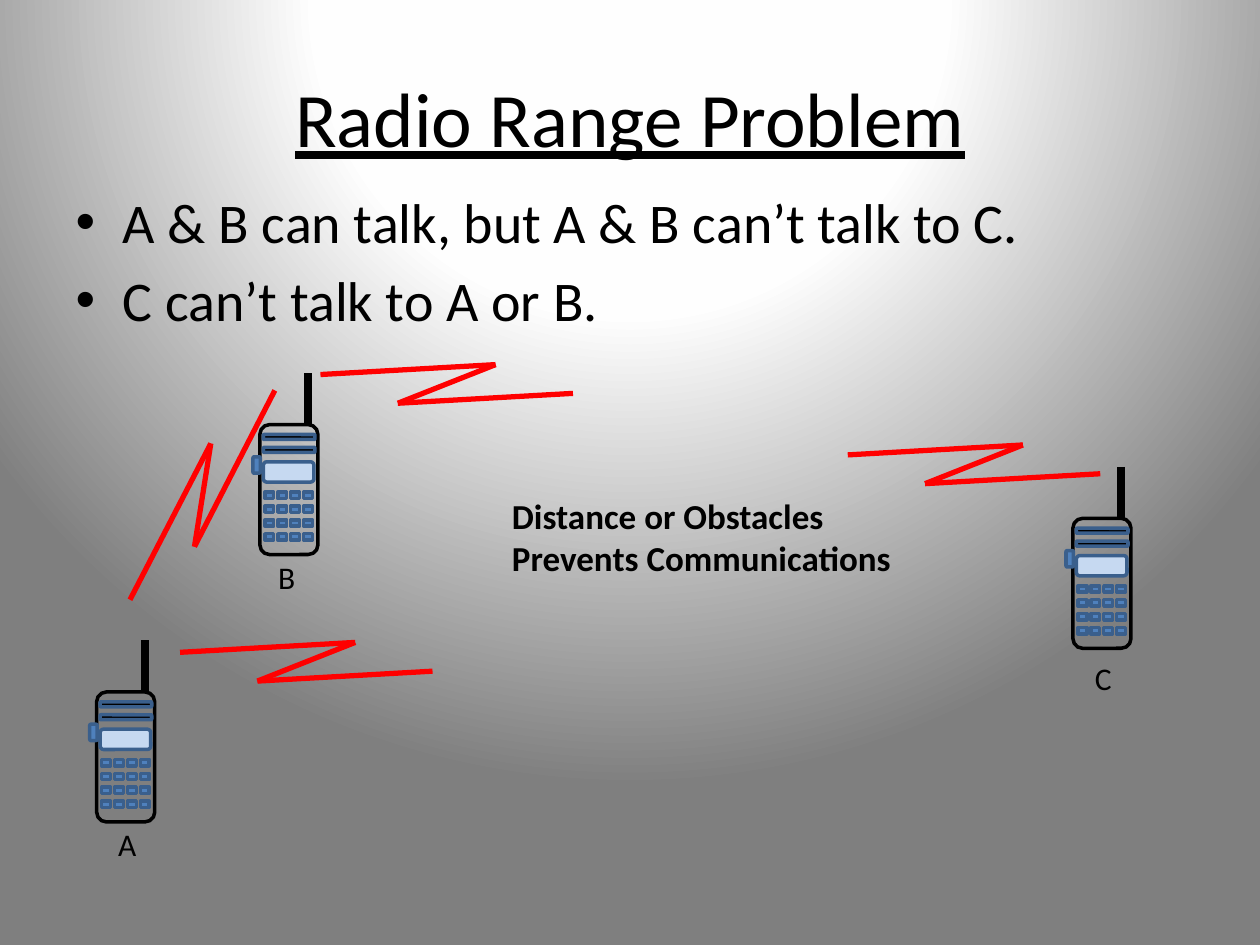
from dataclasses import dataclass

from lxml import etree
from pptx import Presentation
from pptx import util as u
from pptx.dml.color import RGBColor
from pptx.enum import shapes as sh, text as tx
from pptx.oxml import parse_xml
from pptx.oxml.ns import qn

FONT = "Calibri"
EDGE, KEY, BLACK, RED = "3A5F8C", "4F81BD", "000000", "FF0000"
ROUND, RECT = sh.MSO_SHAPE.ROUNDED_RECTANGLE, sh.MSO_SHAPE.RECTANGLE
NS = "http://schemas.openxmlformats.org"


@dataclass
class Box:
    """A rectangle in centimetres."""
    x: float
    y: float
    w: float
    h: float

    def cm(self) -> list:
        return [u.Cm(v) for v in (self.x, self.y, self.w, self.h)]


@dataclass
class Radio:
    x: float
    y: float
    name: str
    label: Box


@dataclass
class Bolt:
    x: float
    y: float
    steps: list


@dataclass
class Note:
    lines: list
    box: Box
    size: int
    bold: bool = False
    wrap: bool = True


FLAT = [(0, 0), (3.53, -0.2), (1.56, 0.58), (5.09, 0.38)]
STEEP = [(0, 0), (1.63, -3.15), (1.3, -1.07), (2.92, -4.22)]

RADIOS = [
    Radio(5.24, 8.56, "B", Box(5.36, 11.13, 1.07, 1.02)),
    Radio(1.95, 13.95, "A", Box(2.13, 16.51, 0.81, 1.02)),
    Radio(21.63, 10.45, "C", Box(21.82, 13.16, 1.07, 1.02)),
]
BOLTS = [
    Bolt(2.62, 12.09, STEEP),
    Bolt(3.63, 13.15, FLAT),
    Bolt(17.09, 9.17, FLAT),
    Bolt(6.46, 7.55, FLAT),
]
CAUSE = Note(["Distance or Obstacles", "Prevents Communications"],
             Box(10.07, 9.85, 8.23, 1.96), 20, bold=True, wrap=False)


def rgb(code: str) -> RGBColor:
    return RGBColor.from_string(code)


def add_run(para, words: str, size: int, **style) -> None:
    run = para.add_run()
    run.text = words
    font = run.font
    font.name, font.size, font.color.rgb = FONT, u.Pt(size), rgb(BLACK)
    for key, value in style.items():
        setattr(font, key, value)


def add_paras(frame, lines: list) -> list:
    """Return one empty paragraph for each line."""
    return [frame.paragraphs[0]] + [frame.add_paragraph() for _ in lines[1:]]


def draw_back(slide) -> None:
    stops = "".join(
        f'<a:gs pos="{pos}"><a:srgbClr val="{code}"/></a:gs>'
        for pos, code in [(0, "FFFFFF"), (40000, "FEFEFE"), (100000, "7F7F7F")])
    back = parse_xml(
        f'<p:bg xmlns:p="{NS}/presentationml/2006/main"'
        f' xmlns:a="{NS}/drawingml/2006/main"><p:bgPr>'
        f'<a:gradFill rotWithShape="1"><a:gsLst>{stops}</a:gsLst>'
        '<a:path path="circle"><a:fillToRect l="50000" t="-80000" r="50000"'
        ' b="180000"/></a:path></a:gradFill><a:effectLst/></p:bgPr></p:bg>')
    slide.element.cSld.insert(0, back)


def draw_line(group, start: tuple, end: tuple, color: str, width: float) -> None:
    line = group.shapes.add_connector(
        sh.MSO_CONNECTOR.STRAIGHT, *[u.Cm(v) for v in (*start, *end)])
    line.line.color.rgb, line.line.width = rgb(color), u.Pt(width)
    etree.SubElement(line.element.spPr, qn("a:effectLst"))


def draw_part(group, kind, box: Box, fill: str = "", edge: str = EDGE) -> None:
    part = group.shapes.add_shape(kind, *box.cm())
    part.shadow.inherit = False
    part.line.color.rgb, part.line.width = rgb(edge), u.Pt(2)
    if fill:
        part.fill.solid()
        part.fill.fore_color.rgb = rgb(fill)
    else:
        part.fill.background()


def draw_note(slide, note: Note) -> None:
    frame = slide.shapes.add_textbox(*note.box.cm()).text_frame
    frame.word_wrap = note.wrap
    for para, words in zip(add_paras(frame, note.lines), note.lines):
        add_run(para, words, note.size, bold=note.bold)


def draw_radio(slide, radio: Radio) -> None:
    group = slide.shapes.add_group_shape()
    x, y = radio.x, radio.y
    draw_part(group, ROUND, Box(x, y, 1.17, 2.62), edge=BLACK)
    draw_part(group, ROUND, Box(x + 0.07, y + 0.75, 1.02, 0.41), "C6D9F1")
    for drop in (0.2, 0.46):
        draw_part(group, ROUND, Box(x + 0.07, y + drop, 1.04, 0.1), BLACK)
    for row in range(4):
        for col in range(4):
            key = Box(x + 0.1 + 0.26 * col, y + 1.36 + 0.28 * row, 0.18, 0.13)
            draw_part(group, RECT, key, KEY)
    draw_line(group, (x + 0.97, y - 1.04), (x + 0.97, y), BLACK, 4.5)
    draw_part(group, ROUND, Box(x - 0.14, y + 0.65, 0.15, 0.33), KEY)
    draw_note(slide, Note([radio.name], radio.label, 18))


def draw_bolt(slide, bolt: Bolt) -> None:
    group = slide.shapes.add_group_shape()
    points = [(bolt.x + dx, bolt.y + dy) for dx, dy in bolt.steps]
    for start, end in zip(points, points[1:]):
        draw_line(group, start, end, RED, 3)


def place(holder, box: Box) -> None:
    holder.left, holder.top, holder.width, holder.height = box.cm()


def fill_text(slide) -> None:
    """Fill the title and the bullet list."""
    title, body = slide.shapes.title, slide.placeholders[1]
    place(title, Box(1.27, 0.76, 22.86, 3.18))
    place(body, Box(1.27, 3.65, 22.86, 13.89))
    head = title.text_frame.paragraphs[0]
    head.alignment = tx.PP_ALIGN.CENTER
    add_run(head, "Radio Range Problem", 44, underline=True)
    lines = ["A & B can talk, but A & B can’t talk to C.",
             "C can’t talk to A or B."]
    for para, words in zip(add_paras(body.text_frame, lines), lines):
        add_run(para, words, 32)


def main() -> None:
    deck = Presentation()
    deck.slide_width, deck.slide_height = u.Cm(25.4), u.Cm(19.05)
    slide = deck.slides.add_slide(deck.slide_layouts[1])
    draw_back(slide)
    fill_text(slide)
    for radio in RADIOS:
        draw_radio(slide, radio)
    for bolt in BOLTS:
        draw_bolt(slide, bolt)
    draw_note(slide, CAUSE)
    deck.save("out.pptx")


if __name__ == "__main__":
    main()
